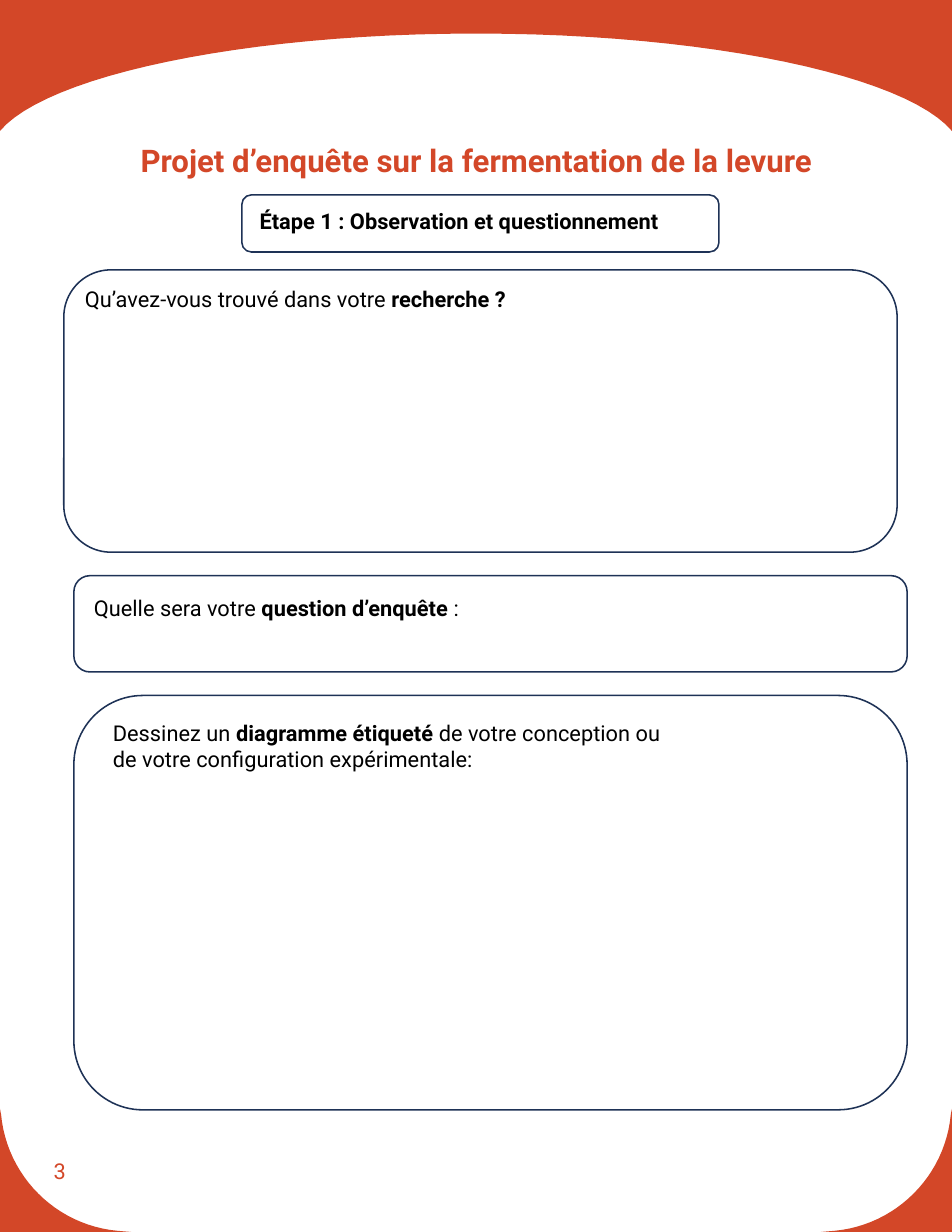
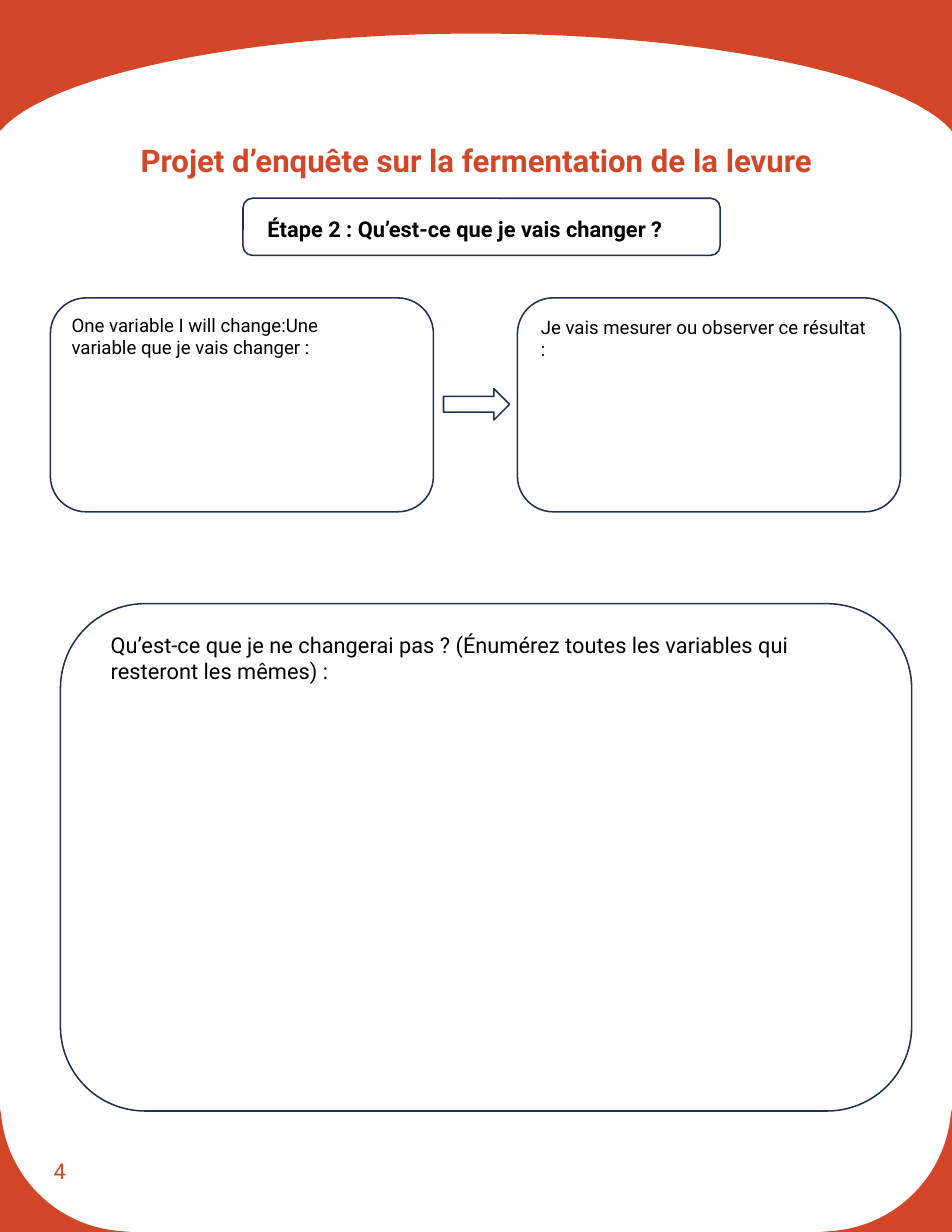
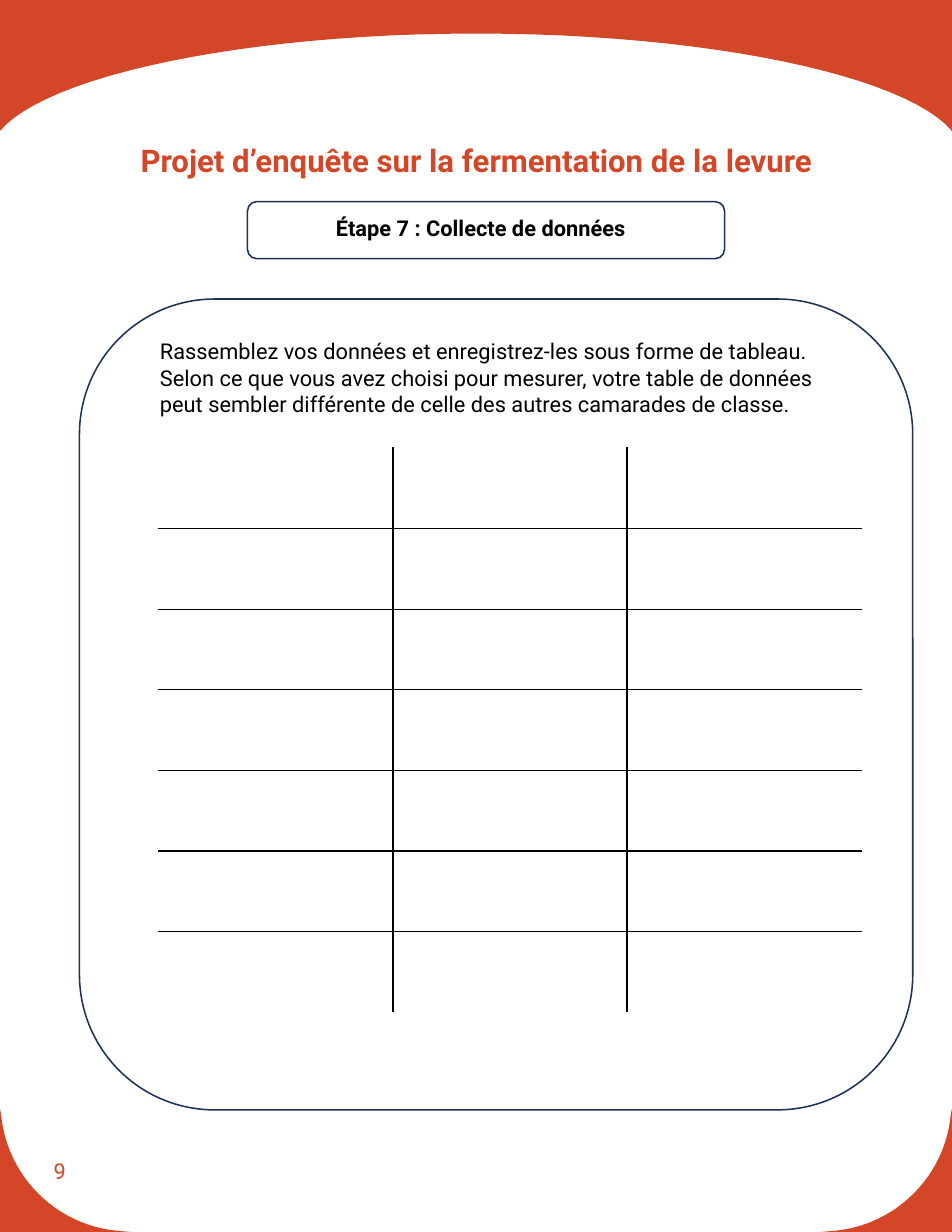
import pptx
import pptx.dml.color
import pptx.enum.shapes
import pptx.enum.text
import pptx.oxml
import pptx.oxml.ns
import pptx.util
from pptx.util import Inches

RGBColor = pptx.dml.color.RGBColor
MSO_SHAPE = pptx.enum.shapes.MSO_SHAPE
MSO_ANCHOR = pptx.enum.text.MSO_ANCHOR

ORANGE = RGBColor(0xD3, 0x47, 0x28)
NAVY = RGBColor(0x1E, 0x32, 0x56)
BLACK = RGBColor(0, 0, 0)
WHITE = RGBColor(0xFF, 0xFF, 0xFF)

FONT = "Roboto"
PAGE_W, PAGE_H = 8.5, 11
TITLE = "Projet d’enquête sur la fermentation de la levure"


def bezier(p0, p1, p2, p3, steps=24):
    """Return points along a cubic curve, both ends included."""
    points = []
    for i in range(steps + 1):
        t = i / steps
        weights = ((1 - t) ** 3, 3 * t * (1 - t) ** 2, 3 * t ** 2 * (1 - t), t ** 3)
        points.append(tuple(sum(w * p[axis] for w, p in zip(weights, (p0, p1, p2, p3)))
                            for axis in (0, 1)))
    return points


def mirror(points):
    return [(PAGE_W - x, y) for x, y in points]


ARCH_HALF = bezier((0, 1.17), (0.41, 0.68), (2.16, 0.3), (4.25, 0.3))
TOP_BAND = [(0, 0), *ARCH_HALF, *reversed(mirror(ARCH_HALF)), (PAGE_W, 0)]
CORNER = [(0, 9.9), *bezier((0.01, 9.95), (0.06, 10.5), (0.5, 10.94), (1.05, 10.99)),
          (1.17, PAGE_H), (0, PAGE_H)]


class Worksheet:
    """Holds the workbook style and the slide being filled."""

    def __init__(self):
        self.prs = pptx.Presentation()
        self.prs.slide_width = Inches(PAGE_W)
        self.prs.slide_height = Inches(PAGE_H)
        self.s = None

    def page(self, number):
        """Start a page with its bands, title and page number."""
        self.s = self.prs.slides.add_slide(self.prs.slide_layouts[5])
        for outline in (TOP_BAND, CORNER, mirror(CORNER)):
            self.band(outline)
        self.title()
        self.text(0.38, 10.16, 1.91, 0.59, [[(str(number), False)]],
                  color=ORANGE, anchor=MSO_ANCHOR.MIDDLE)

    def band(self, points):
        (x, y), *rest = [(Inches(x), Inches(y)) for x, y in points]
        builder = self.s.shapes.build_freeform(x, y)
        builder.add_line_segments(rest, close=True)
        sp = builder.convert_to_shape()
        sp.shadow.inherit = False
        sp.fill.solid()
        sp.fill.fore_color.rgb = ORANGE
        sp.line.fill.background()

    def title(self):
        sp = self.s.shapes.title
        sp.left, sp.top = Inches(0.36), Inches(1.21)
        sp.width, sp.height = Inches(7.79), Inches(0.74)
        tf = sp.text_frame
        tf.auto_size = pptx.enum.text.MSO_AUTO_SIZE.NONE
        tf.vertical_anchor = MSO_ANCHOR.TOP
        p = tf.paragraphs[0]
        p.alignment = pptx.enum.text.PP_ALIGN.CENTER
        self.run(p, TITLE, True, 20, ORANGE)

    def run(self, p, text, bold, size, color):
        r = p.add_run()
        r.text = text
        r.font.name = FONT
        r.font.size = pptx.util.Pt(size)
        r.font.bold = bold
        r.font.color.rgb = color

    def text(self, x, y, w, h, paragraphs, size=14, color=BLACK, anchor=MSO_ANCHOR.TOP):
        """Add a text box; each paragraph is a list of (text, bold) runs."""
        sp = self.s.shapes.add_textbox(Inches(x), Inches(y), Inches(w), Inches(h))
        tf = sp.text_frame
        tf.word_wrap = True
        tf.vertical_anchor = anchor
        for i, runs in enumerate(paragraphs):
            p = tf.add_paragraph() if i else tf.paragraphs[0]
            for text, bold in runs:
                self.run(p, text, bold, size, color)

    def frame(self, x, y, w, h, kind=MSO_SHAPE.ROUNDED_RECTANGLE, fill=None):
        sp = self.s.shapes.add_shape(kind, Inches(x), Inches(y), Inches(w), Inches(h))
        sp.shadow.inherit = False
        if fill is None:
            sp.fill.background()
        else:
            sp.fill.solid()
            sp.fill.fore_color.rgb = fill
        sp.line.color.rgb = NAVY
        sp.line.width = pptx.util.Pt(1)

    def step(self, x, y, text_x, text_y, text):
        """Add the framed heading of a step."""
        self.frame(x, y, 4.26, 0.51)
        self.text(text_x, text_y, 4.13, 0.34, [[(text, True)]])

    def grid(self, x, y, rows, cols, col_w, row_h):
        """Add an empty table ruled in black inside and white around."""
        table = self.s.shapes.add_table(rows, cols, Inches(x), Inches(y), Inches(cols * col_w),
                                        Inches(rows * row_h)).table
        table.first_row = table.horz_banding = False
        for column in table.columns:
            column.width = Inches(col_w)
        for i, row in enumerate(table.rows):
            row.height = Inches(row_h)
            for j, cell in enumerate(row.cells):
                outer = {"L": j == 0, "R": j == cols - 1, "T": i == 0, "B": i == rows - 1}
                for side, is_outer in outer.items():
                    self.border(cell, side, WHITE if is_outer else BLACK)
                cell.fill.background()

    def border(self, cell, side, color):
        ns = pptx.oxml.ns.nsdecls("a")
        cell._tc.get_or_add_tcPr().append(pptx.oxml.parse_xml(
            f'<a:ln{side} {ns} w="12700"><a:solidFill><a:srgbClr val="{color}"/>'
            f'</a:solidFill></a:ln{side}>'))


def observation_page(ws):
    ws.page(3)
    ws.frame(0.66, 5.14, 7.44, 0.86, fill=WHITE)
    ws.text(0.74, 5.26, 7.26, 0.34, [[("Quelle sera votre ", False),
                                      ("question d’enquête ", True), (":", False)]])
    ws.frame(0.57, 2.41, 7.44, 2.52)
    ws.text(0.66, 2.5, 4.37, 0.34, [[("Qu’avez-vous trouvé dans votre ", False),
                                     ("recherche ?", True)]])
    ws.step(2.16, 1.74, 2.22, 1.81, "Étape 1 : Observation et questionnement")
    ws.frame(0.66, 6.21, 7.44, 3.7)
    ws.text(0.91, 6.38, 5.66, 0.57, [
        [("Dessinez un ", False), ("diagramme étiqueté ", True),
         ("de votre conception ou", False)],
        [("de votre configuration expérimentale:", False)]])


def variables_page(ws):
    ws.page(4)
    ws.step(2.17, 1.77, 2.29, 1.88, "Étape 2 : Qu’est-ce que je vais changer ?")
    for x in (0.45, 4.62):
        ws.frame(x, 2.66, 3.42, 1.91)
    ws.frame(3.96, 3.47, 0.59, 0.28, MSO_SHAPE.RIGHT_ARROW)
    ws.text(0.54, 2.75, 2.58, 0.71, [[
        ("One variable I will change:Une variable que je vais changer :", False)]], size=12)
    ws.text(4.73, 2.77, 3.12, 0.5, [[
        ("Je vais mesurer ou observer ce résultat :", False)]], size=12)
    ws.frame(0.54, 5.39, 7.6, 4.53)
    ws.text(0.89, 5.59, 6.71, 0.57, [[
        ("Qu’est-ce que je ne changerai pas ? (Énumérez toutes les variables qui "
         "resteront les mêmes) :", False)]])


def data_page(ws):
    ws.page(9)
    ws.step(2.21, 1.8, 2.9, 1.87, "Étape 7 : Collecte de données")
    ws.frame(0.71, 2.67, 7.44, 7.24)
    ws.text(1.33, 2.97, 6.46, 1.04, [[
        ("Rassemblez vos données et enregistrez-les sous forme de tableau. "
         "Selon ce que vous avez choisi pour mesurer, votre table de données peut sembler "
         "différente de celle des autres camarades de classe.", False)]])
    ws.grid(1.42, 4, rows=7, cols=3, col_w=2.09, row_h=0.72)


def main():
    ws = Worksheet()
    observation_page(ws)
    variables_page(ws)
    data_page(ws)
    ws.prs.save("out.pptx")


if __name__ == "__main__":
    main()
